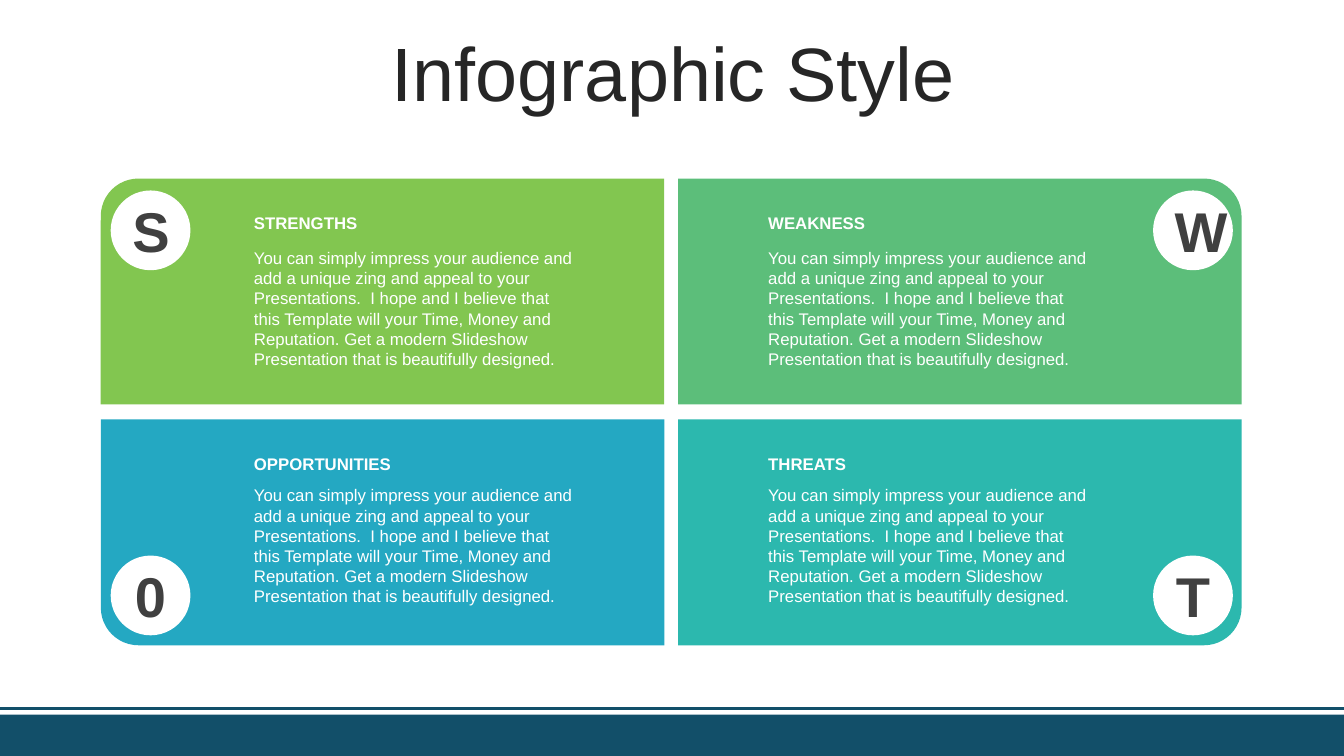
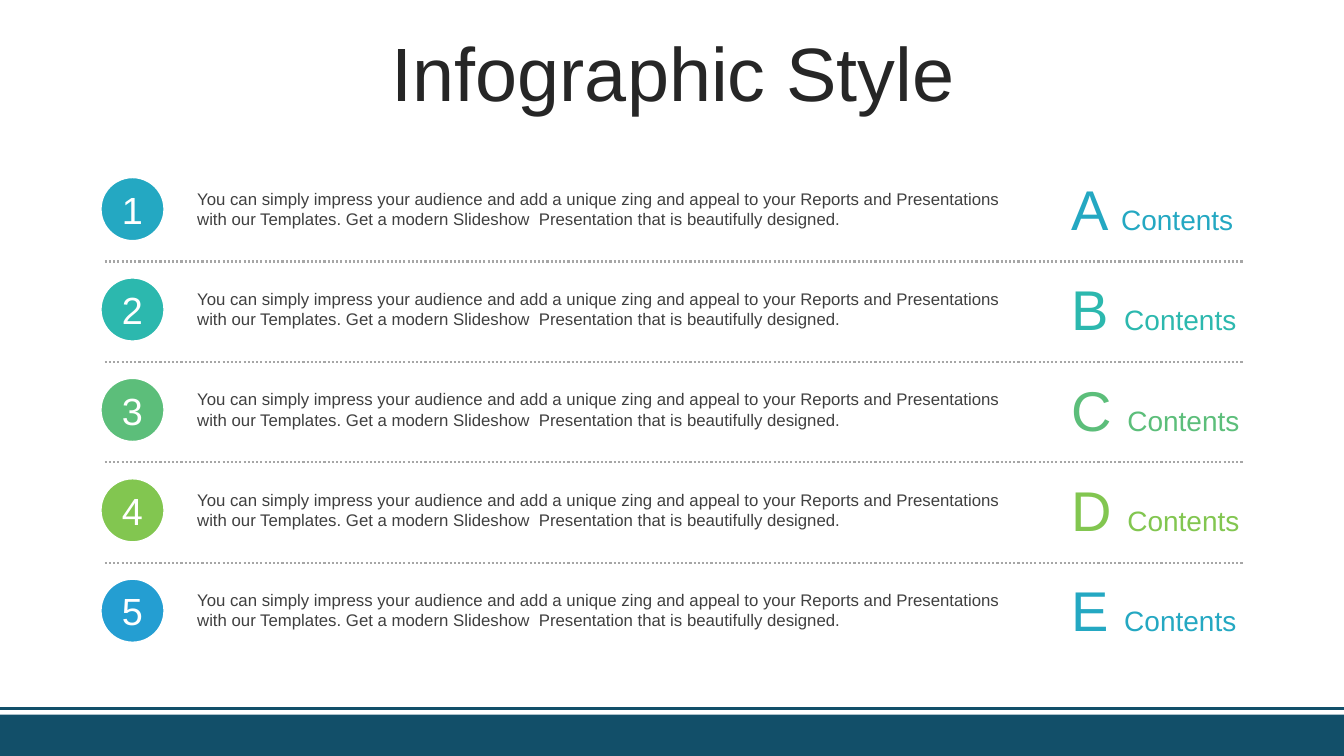
from lxml import etree
from pptx import Presentation
from pptx.dml.color import RGBColor
from pptx.enum import dml, shapes, text
from pptx.oxml.ns import qn
from pptx.util import Cm, Pt

FONT = "Arial"
HEX = {
    "navy": "124F69", "title": "262626", "dark": "404040", "gray": "A6A6A6",
    "white": "FFFFFF", "lime": "82C650", "green": "5CBE7A",
    "cyan": "24A8C2", "teal": "2CB8AE", "blue": "249ED2",
}
WIDE, HIGH = 33.87, 19.05
SWOT = (
    "You can simply impress your audience and add a unique zing and appeal to your "
    "Presentations.  I hope and I believe that this Template will your Time, Money and "
    "Reputation. Get a modern Slideshow  Presentation that is beautifully designed."
)
ITEM = (
    "You can simply impress your audience and add a unique zing and appeal to your "
    "Reports and Presentations with our Templates. Get a modern Slideshow  "
    "Presentation that is beautifully designed."
)


def rgb(name):
    return RGBColor.from_string(HEX[name])


def add_run(para, words, size, color, bold=False):
    run = para.add_run()
    run.text = words
    font = run.font
    font.name, font.size, font.bold = FONT, Pt(size), bold
    font.color.rgb = rgb(color)


def add_box(slide, kind, x, y, w, h, color):
    box = slide.shapes.add_shape(kind, Cm(x), Cm(y), Cm(w), Cm(h))
    box.shadow.inherit = False
    box.fill.solid()
    box.fill.fore_color.rgb = rgb(color)
    box.line.fill.background()
    return box


def add_disc(slide, x, y, side, color, mark, size, ink, bold=False):
    disc = add_box(slide, shapes.MSO_SHAPE.OVAL, x, y, side, side, color)
    disc.text_frame.vertical_anchor = text.MSO_ANCHOR.MIDDLE
    para = disc.text_frame.paragraphs[0]
    para.alignment = text.PP_ALIGN.CENTER
    add_run(para, mark, size, ink, bold)
    return disc


def add_text(slide, x, y, w, h, *runs):
    frame = slide.shapes.add_textbox(Cm(x), Cm(y), Cm(w), Cm(h)).text_frame
    frame.word_wrap = True
    frame.auto_size = text.MSO_AUTO_SIZE.SHAPE_TO_FIT_TEXT
    for run in runs:
        add_run(frame.paragraphs[0], *run)


def add_line(slide, left, right, y, color, width):
    line = slide.shapes.add_connector(
        shapes.MSO_CONNECTOR.STRAIGHT, Cm(left), Cm(y), Cm(right), Cm(y))
    line.line.color.rgb = rgb(color)
    line.line.width = Pt(width)
    etree.SubElement(line.element.spPr, qn("a:effectLst"))
    return line


def set_base(deck, layout):
    for holder in list(layout.placeholders):
        if holder.placeholder_format.idx:
            holder.element.getparent().remove(holder.element)
    slide = deck.slides.add_slide(layout)
    line = add_line(slide, 0, WIDE, 17.86, "navy", 2)
    band = add_box(slide, shapes.MSO_SHAPE.RECTANGLE, 0, 18.01, WIDE, HIGH - 18.01, "navy")
    for part in (line, band):
        layout.shapes.element.append(part.element)
    return slide


def set_title(slide, words):
    title = slide.shapes.title
    title.left, title.top, title.width, title.height = Cm(0.89), Cm(0.94), Cm(32.16), Cm(2)
    frame = title.text_frame
    frame.auto_size = text.MSO_AUTO_SIZE.NONE
    frame.vertical_anchor = text.MSO_ANCHOR.MIDDLE
    para = frame.paragraphs[0]
    para.alignment = text.PP_ALIGN.CENTER
    para.line_spacing = 0.9
    para.space_before = Pt(10)
    add_run(para, words, 54, "title")


def add_card(slide, col, row, color, mark, head):
    x, disc_x, text_x = ((2.54, 2.79, 6.15), (17.09, 29.06, 19.11))[col]
    y, disc_y, head_y, body_y = ((4.5, 4.8, 5.23, 6.12), (10.57, 14, 11.3, 12.1))[row]
    card = add_box(slide, shapes.MSO_SHAPE.ROUND_1_RECTANGLE, x, y, 14.2, 5.69, color)
    card.rotation = 180 * row
    if col == row:
        card.element.spPr.find(qn("a:xfrm")).set("flipH", "1")
    add_disc(slide, disc_x, disc_y, 2.01, "white", mark, 40, "dark", True)
    add_text(slide, text_x, head_y, 8.6, 0.77, (head, 12, "white", True))
    add_text(slide, text_x, body_y, 8.6, 3.33, (SWOT, 12, "white"))


def add_item(slide, index, mark, fill, ink):
    drop = 2.53 * index
    disc = add_disc(slide, 2.54, 4.47 + drop, 1.6, fill, str(index + 1), 27, "white")
    disc.line.color.rgb = rgb("white")
    disc.line.width = Pt(1.25)
    add_text(slide, 4.72, 4.62 + drop, 20.83, 1.28, (ITEM, 12, "dark"))
    add_text(slide, 26.75, 4.27 + drop, 4.83, 1.96,
             (mark + " ", 40, ink), ("Contents", 20, ink))


def main():
    deck = Presentation()
    deck.slide_width, deck.slide_height = Cm(WIDE), Cm(HIGH)
    layout = deck.slide_layouts[5]
    swot = set_base(deck, layout)
    items = deck.slides.add_slide(layout)
    for slide in (swot, items):
        set_title(slide, "Infographic Style")

    cards = (("lime", "S", "STRENGTHS"), ("green", "W", "WEAKNESS"),
             ("cyan", "0", "OPPORTUNITIES"), ("teal", "T", "THREATS"))
    for index, card in enumerate(cards):
        add_card(swot, index % 2, index // 2, *card)

    rows = (("A", "cyan", "cyan"), ("B", "teal", "teal"), ("C", "green", "green"),
            ("D", "lime", "lime"), ("E", "blue", "cyan"))
    for index, row in enumerate(rows):
        add_item(items, index, *row)
        if index:
            line = add_line(items, 2.64, 31.34, 4.06 + 2.53 * index, "gray", 1.5)
            line.line.dash_style = dml.MSO_LINE.ROUND_DOT

    deck.save("out.pptx")


if __name__ == "__main__":
    main()
